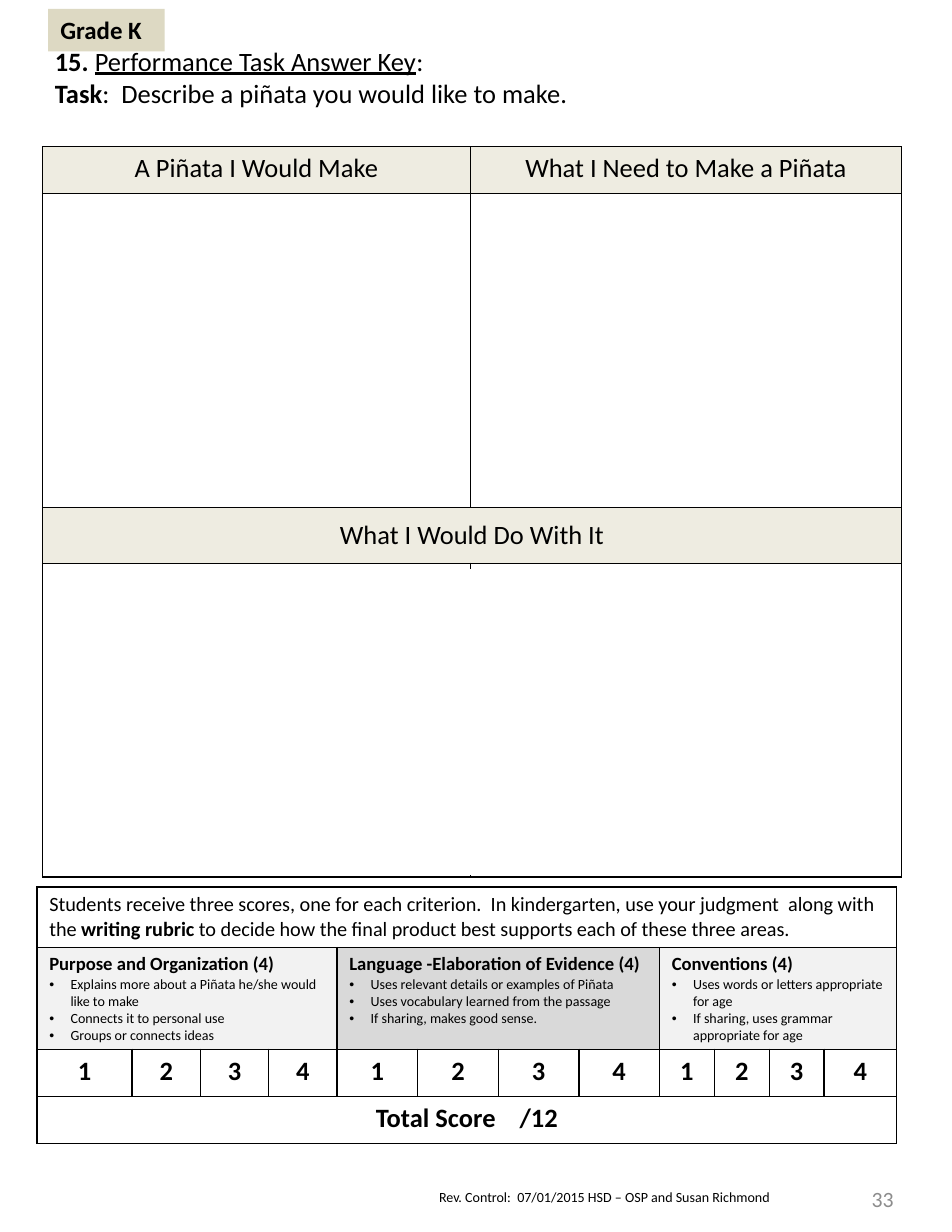
from lxml.etree import SubElement
from pptx import Presentation
from pptx.dml.color import RGBColor
from pptx.enum.shapes import MSO_CONNECTOR, MSO_SHAPE
from pptx.enum.text import MSO_ANCHOR, PP_ALIGN
from pptx.oxml import parse_xml
from pptx.oxml.ns import nsdecls, qn
from pptx.util import Inches, Pt

COLORS = {"ink": "000000", "paper": "FFFFFF", "tab": "DDD9C3", "heading": "EEECE1",
          "light": "F2F2F2", "medium": "D9D9D9", "number": "8C8C8C"}
FONT = "Calibri"
EDGES = ("L", "R", "T", "B")
SCORES = ("1", "2", "3", "4")
CRITERIA = [
    ("Purpose and Organization (4)", "light",
     ["Explains more about a Piñata he/she would like to make",
      "Connects it to personal use", "Groups or connects ideas"]),
    ("Language -Elaboration of Evidence (4)", "medium",
     ["Uses relevant details or examples of Piñata",
      "Uses vocabulary learned from the passage", "If sharing, makes good sense."]),
    ("Conventions (4)", "light",
     ["Uses words or letters appropriate for age",
      "If sharing, uses grammar appropriate for age"]),
]


def color(name):
    return RGBColor.from_string(COLORS[name])


def write(frame, *lines, size=17, bold=False, ink="ink", align=PP_ALIGN.LEFT):
    """Each line is a list of (text, overrides) spans; 'bullet' marks a list item."""
    frame.word_wrap = True
    for index, line in enumerate(lines):
        para = frame.paragraphs[0] if index == 0 else frame.add_paragraph()
        para.alignment = align
        spans = [(line, {})] if isinstance(line, str) else line
        for text, style in spans:
            span = para.add_run()
            span.text = text
            span.font.name = FONT
            span.font.size = Pt(style.get("size", size))
            span.font.bold = style.get("bold", bold)
            span.font.underline = style.get("underline", False)
            span.font.color.rgb = color(ink)
            if style.get("bullet"):
                add_bullet(para)


def add_bullet(para):
    props = para._p.get_or_add_pPr()
    props.set("marL", str(Inches(0.19)))
    props.set("indent", str(-Inches(0.19)))
    SubElement(props, qn("a:buFont"), typeface="Arial")
    SubElement(props, qn("a:buChar"), char="•")


def set_borders(cell, visible=EDGES):
    props = cell._tc.get_or_add_tcPr()
    for index, edge in enumerate(EDGES):
        paint = (f'<a:solidFill><a:srgbClr val="{COLORS["ink"]}"/></a:solidFill>'
                 if edge in visible else "<a:noFill/>")
        props.insert(index, parse_xml(
            f'<a:ln{edge} {nsdecls("a")} w="{Pt(1)}">{paint}</a:ln{edge}>'))


def fill_cell(cell, *lines, fill=None, anchor=MSO_ANCHOR.TOP, **style):
    if fill:
        cell.fill.solid()
        cell.fill.fore_color.rgb = color(fill)
    cell.vertical_anchor = anchor
    write(cell.text_frame, *lines, **style)


def add_grid(page, left, top, columns, rows):
    """Place a bordered table with unfilled cells, sized by its columns and rows."""
    box = [Inches(value) for value in (left, top, sum(columns), sum(rows))]
    table = page.shapes.add_table(len(rows), len(columns), *box).table
    table.first_row = table.horz_banding = False
    for column, width in zip(table.columns, columns):
        column.width = Inches(width)
    for row, height in zip(table.rows, rows):
        row.height = Inches(height)
    for cell in table.iter_cells():
        cell.margin_left = cell.margin_right = Inches(0.11)
        cell.margin_top = cell.margin_bottom = Inches(0.05)
        cell.fill.background()
    return table


def add_answer_table(page, left, top):
    columns, rows = [3.82, 3.85], [0.95, 0.42, 2.8, 0.5, 2.8]
    table = add_grid(page, left, top, columns, rows)
    for index, cell in enumerate(table.iter_cells()):
        set_borders(cell, "B" if index < len(columns) else EDGES)
    for row in (0, 3):
        table.cell(row, 0).merge(table.cell(row, 1))

    # Task statement
    fill_cell(table.cell(0, 0),
              [("15. ", {"bold": True}),
               ("Performance Task Answer Key", {"underline": True}), (":", {})],
              [("Task", {"bold": True}),
               (":  Describe a piñata you would like to make.", {})], fill="paper")

    # Headings of the answer areas
    heading = {"fill": "heading", "align": PP_ALIGN.CENTER}
    fill_cell(table.cell(1, 0), "A Piñata I Would Make", **heading)
    fill_cell(table.cell(1, 1), "What I Need to Make a Piñata", **heading)
    fill_cell(table.cell(3, 0), "What I Would Do With It",
              anchor=MSO_ANCHOR.MIDDLE, **heading)

    # White band that opens the last row into one area
    middle = Inches(left + columns[0] - 0.03)
    bottom = top + sum(rows)
    band = page.shapes.add_connector(MSO_CONNECTOR.STRAIGHT, middle,
                                     Inches(bottom - rows[-1] + 0.05),
                                     middle, Inches(bottom - 0.02))
    band.line.color.rgb = color("paper")
    band.line.width = Pt(7.75)
    SubElement(band._element.spPr, qn("a:effectLst"))


def add_score_table(page, left, top):
    columns = [0.85] + [0.61] * 3 + [0.72] * 4 + [0.49] * 3 + [0.65]
    table = add_grid(page, left, top, columns, [0.54, 0.91, 0.42, 0.42])
    for cell in table.iter_cells():
        set_borders(cell)
    last = len(columns) - 1
    for row in (0, 3):
        table.cell(row, 0).merge(table.cell(row, last))

    fill_cell(table.cell(0, 0), [
        ("Students receive three scores, one for each criterion.  In kindergarten, "
         "use your judgment  along with the ", {}),
        ("writing rubric ", {"bold": True}),
        ("to decide how the final product best supports each of these three areas.", {}),
    ], size=13, anchor=MSO_ANCHOR.MIDDLE)

    # One criterion above each run of four scores
    score = {"bold": True, "align": PP_ALIGN.CENTER}
    for group, (title, fill, points) in enumerate(CRITERIA):
        first = group * len(SCORES)
        table.cell(1, first).merge(table.cell(1, first + len(SCORES) - 1))
        bullets = [[(point, {"bullet": True})] for point in points]
        fill_cell(table.cell(1, first), [(title, {"size": 12, "bold": True})],
                  *bullets, size=9, fill=fill)
        for offset, number in enumerate(SCORES):
            fill_cell(table.cell(2, first + offset), number, **score)
    fill_cell(table.cell(3, 0), "Total Score    /12", **score)


def add_label(page, left, top, width, height, text, fill=None,
              anchor=MSO_ANCHOR.TOP, **style):
    box = [Inches(value) for value in (left, top, width, height)]
    if fill:
        label = page.shapes.add_shape(MSO_SHAPE.RECTANGLE, *box)
        label.shadow.inherit = False
        label.fill.solid()
        label.fill.fore_color.rgb = color(fill)
        label.line.fill.background()
    else:
        label = page.shapes.add_textbox(*box)
    frame = label.text_frame
    frame.margin_left = frame.margin_right = Inches(0.11)
    frame.margin_top = frame.margin_bottom = Inches(0.05)
    frame.vertical_anchor = anchor
    write(frame, text, **style)


def main():
    deck = Presentation()
    deck.slide_width, deck.slide_height = Inches(8.5), Inches(11)
    page = deck.slides.add_slide(deck.slide_layouts[6])

    # Footer
    add_label(page, 3.81, 10.56, 4.25, 0.26,
              "Rev. Control:  07/01/2015 HSD – OSP and Susan Richmond", size=9)
    add_label(page, 7.17, 10.41, 0.92, 0.59, "33", size=14, ink="number",
              align=PP_ALIGN.RIGHT, anchor=MSO_ANCHOR.MIDDLE)

    # Answer areas, scoring and grade tab
    add_answer_table(page, 0.38, 0.36)
    add_score_table(page, 0.33, 7.92)
    add_label(page, 0.43, 0.08, 1.04, 0.38, "Grade K", fill="tab", size=16, bold=True)
    deck.save("out.pptx")


if __name__ == "__main__":
    main()
